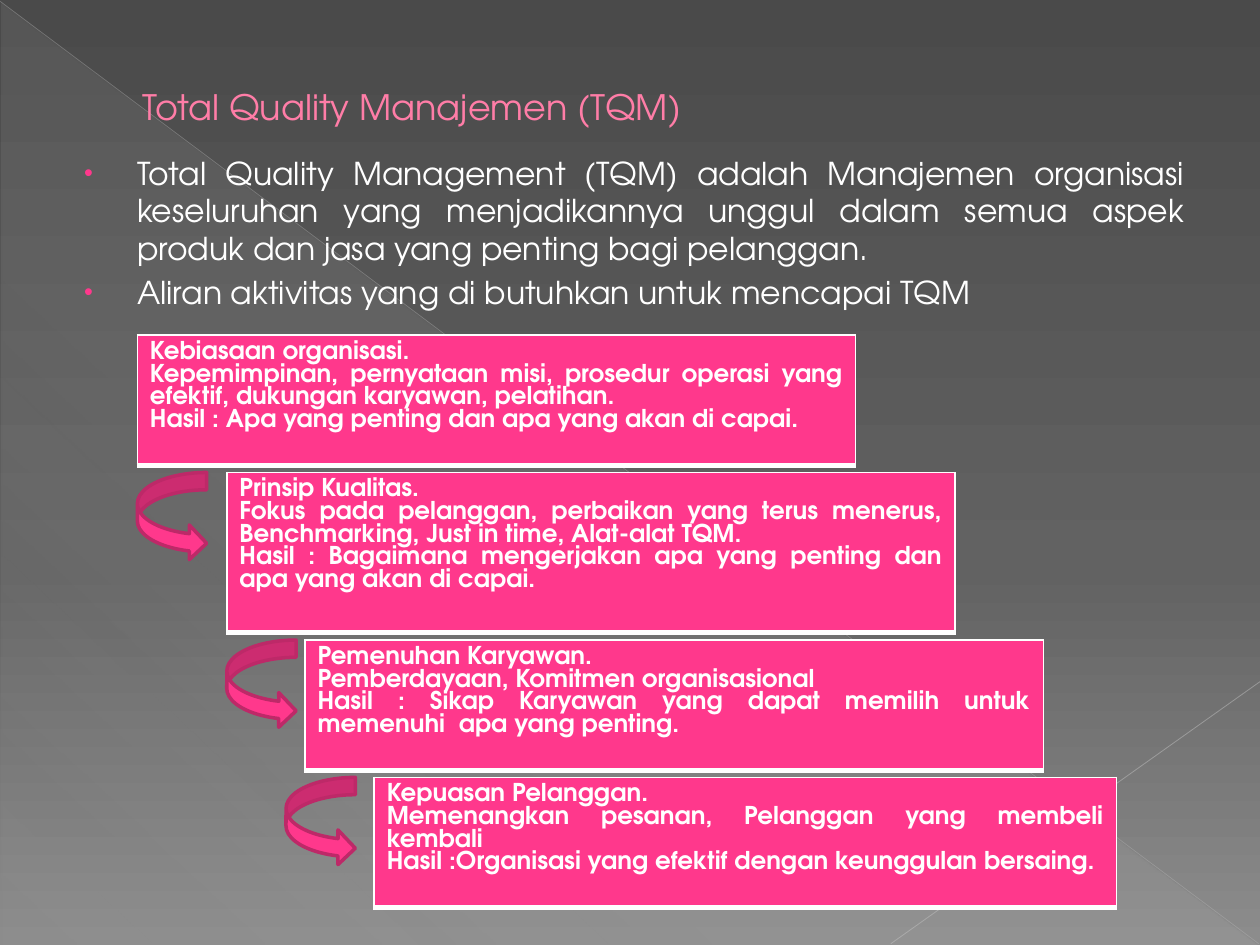
from lxml import etree
from pptx import Presentation
from pptx import util as u
from pptx.dml.color import RGBColor
from pptx.enum import shapes, text
from pptx.oxml import parse_xml
from pptx.oxml.ns import nsdecls, qn

FONT = "TeX Gyre Adventor"
PINK, WHITE = "FF388C", "FFFFFF"

TITLE = "Total Quality Manajemen (TQM)"
POINTS = [
    "Total Quality Management (TQM) adalah Manajemen organisasi keseluruhan "
    "yang menjadikannya unggul dalam semua aspek produk dan jasa yang penting "
    "bagi pelanggan.",
    "Aliran aktivitas yang di butuhkan untuk mencapai TQM",
]
# left, top, width, arrow left, lines
STEPS = [
    (1.09, 2.66, 5.7, None, [
        "Kebiasaan organisasi.",
        "Kepemimpinan, pernyataan misi, prosedur operasi yang efektif, "
        "dukungan karyawan, pelatihan.",
        "Hasil : Apa yang penting dan apa yang akan di capai."]),
    (1.8, 3.75, 5.78, 1.09, [
        "Prinsip Kualitas.",
        "Fokus pada pelanggan, perbaikan yang terus menerus, Benchmarking, "
        "Just in time, Alat-alat TQM.",
        "Hasil : Bagaimana mengerjakan apa yang penting dan apa yang akan "
        "di capai."]),
    (2.42, 5.08, 5.86, 1.8, [
        "Pemenuhan Karyawan.",
        "Pemberdayaan, Komitmen organisasional",
        "Hasil : Sikap Karyawan yang dapat memilih untuk memenuhi  apa yang "
        "penting."]),
    (2.97, 6.17, 5.89, 2.27, [
        "Kepuasan Pelanggan.",
        "Memenangkan pesanan, Pelanggan yang membeli kembali",
        "Hasil :Organisasi yang efektif dengan keunggulan bersaing."]),
]
# position, colour, opacity
SKY = [(0, "4A4A4A", 100), (60, "626262", 100), (100, "8C8C8C", 100)]
SHEEN = [(0, "D2D2D2", 10), (70, "D2D2D2", 8), (100, "D2D2D2", 1)]
# from x, y, to x, y, colour, width, opacity
RAYS = [(0, 0.01, 9.99, 7.49, "BFBFBF", 0.39, 35),
        (10, 5.41, 7.07, 7.49, "C6C6C6", 0.47, 45)]


def inch(*nums):
    return [u.Inches(n) for n in nums]


def rgb(code):
    return RGBColor.from_string(code)


def fade(fill, root, stops, angle):
    fill.gradient()
    old = root.find(".//" + qn("a:gradFill"))
    marks = "".join(
        f'<a:gs pos="{pos * 1000}"><a:srgbClr val="{code}">'
        f'<a:alpha val="{show * 1000}"/></a:srgbClr></a:gs>'
        for pos, code, show in stops)
    new = parse_xml(
        f'<a:gradFill {nsdecls("a")} rotWithShape="1"><a:gsLst>{marks}</a:gsLst>'
        f'<a:lin ang="{angle * 60000}" scaled="0"/></a:gradFill>')
    old.getparent().replace(old, new)


def outline(tag, code, width):
    return parse_xml(
        f'<a:{tag} {nsdecls("a")} w="{round(width * 12700)}"><a:solidFill>'
        f'<a:srgbClr val="{code}"/></a:solidFill></a:{tag}>')


def write(frame, lines, size, code, bold=False, align=text.PP_ALIGN.JUSTIFY):
    frame.text = "\n".join(lines)
    frame.word_wrap = True
    for para in frame.paragraphs:
        para.alignment = align
        for run in para.runs:
            font = run.font
            font.name, font.size, font.bold = FONT, u.Pt(size), bold
            font.color.rgb = rgb(code)


def add_ray(slide, x1, y1, x2, y2, code, width, show):
    ray = slide.shapes.add_connector(
        shapes.MSO_CONNECTOR.STRAIGHT, *inch(x1, y1, x2, y2))
    ray.line.color.rgb = rgb(code)
    ray.line.width = u.Pt(width)
    tint = ray.line._ln.find(".//" + qn("a:srgbClr"))
    etree.SubElement(tint, qn("a:alpha")).set("val", str(show * 1000))
    etree.SubElement(ray._element.spPr, qn("a:effectLst"))


def add_step(slide, left, top, width, lines):
    table = slide.shapes.add_table(1, 1, *inch(left, top, width, 0.41)).table
    table.first_row = table.horz_banding = False
    cell = table.cell(0, 0)
    write(cell.text_frame, lines, 14, WHITE, True)
    cell.fill.solid()
    cell.fill.fore_color.rgb = rgb(PINK)
    props = cell._tc.get_or_add_tcPr()
    for spot, (side, size) in enumerate(zip("LRTB", (1, 1, 1, 3))):
        props.insert(spot, outline("ln" + side, WHITE, size))


def add_arrow(slide, left, top):
    arrow = slide.shapes.add_shape(
        shapes.MSO_SHAPE.CURVED_RIGHT_ARROW, *inch(left, top, 0.55, 0.7))
    arrow.shadow.inherit = False
    arrow.fill.solid()
    arrow.fill.fore_color.rgb = rgb(PINK)
    arrow.line.color.rgb = rgb("BD2968")
    arrow.line.width = u.Pt(2)


def main():
    deck = Presentation()
    deck.slide_width, deck.slide_height = inch(10, 7.5)
    slide = deck.slides.add_slide(deck.slide_layouts[6])

    # Backdrop
    fade(slide.background.fill, slide._element, SKY, 90)
    sheet = slide.shapes.add_shape(
        shapes.MSO_SHAPE.RIGHT_TRIANGLE, *inch(0.01, 0.02, 9.98, 7.48))
    sheet.shadow.inherit = False
    sheet.line.fill.background()
    fade(sheet.fill, sheet._element, SHEEN, 133)
    for ray in RAYS:
        add_ray(slide, *ray)

    # Title
    head = slide.shapes.add_textbox(*inch(0.5, 0.29, 9, 1.11)).text_frame
    write(head, [TITLE], 20, "FF7DA7", align=text.PP_ALIGN.LEFT)
    head.vertical_anchor = text.MSO_ANCHOR.MIDDLE
    para = head.paragraphs[0]
    para._p.get_or_add_pPr().set("marL", str(u.Inches(0.53)))
    para.runs[0].font._element.insert(0, outline("ln", "B12761", 0.5))

    # Bullet points
    body = slide.shapes.add_textbox(*inch(0.5, 1.17, 9, 5.89)).text_frame
    write(body, POINTS, 18, WHITE)
    for para in body.paragraphs:
        para.space_before = u.Pt(3.6)
        props = para._p.get_or_add_pPr()
        props.set("marL", str(u.Inches(0.49)))
        props.set("indent", str(u.Inches(-0.42)))
        tint = etree.SubElement(props, qn("a:buClr"))
        etree.SubElement(tint, qn("a:srgbClr")).set("val", PINK)
        etree.SubElement(props, qn("a:buSzPct")).set("val", "80000")
        etree.SubElement(props, qn("a:buFont")).set("typeface", "Arial")
        etree.SubElement(props, qn("a:buChar")).set("char", "•")

    # Steps and the arrows that lead to them
    for left, top, width, turn, lines in STEPS:
        add_step(slide, left, top, width, lines)
        if turn is not None:
            add_arrow(slide, turn, top)

    deck.save("out.pptx")


if __name__ == "__main__":
    main()
